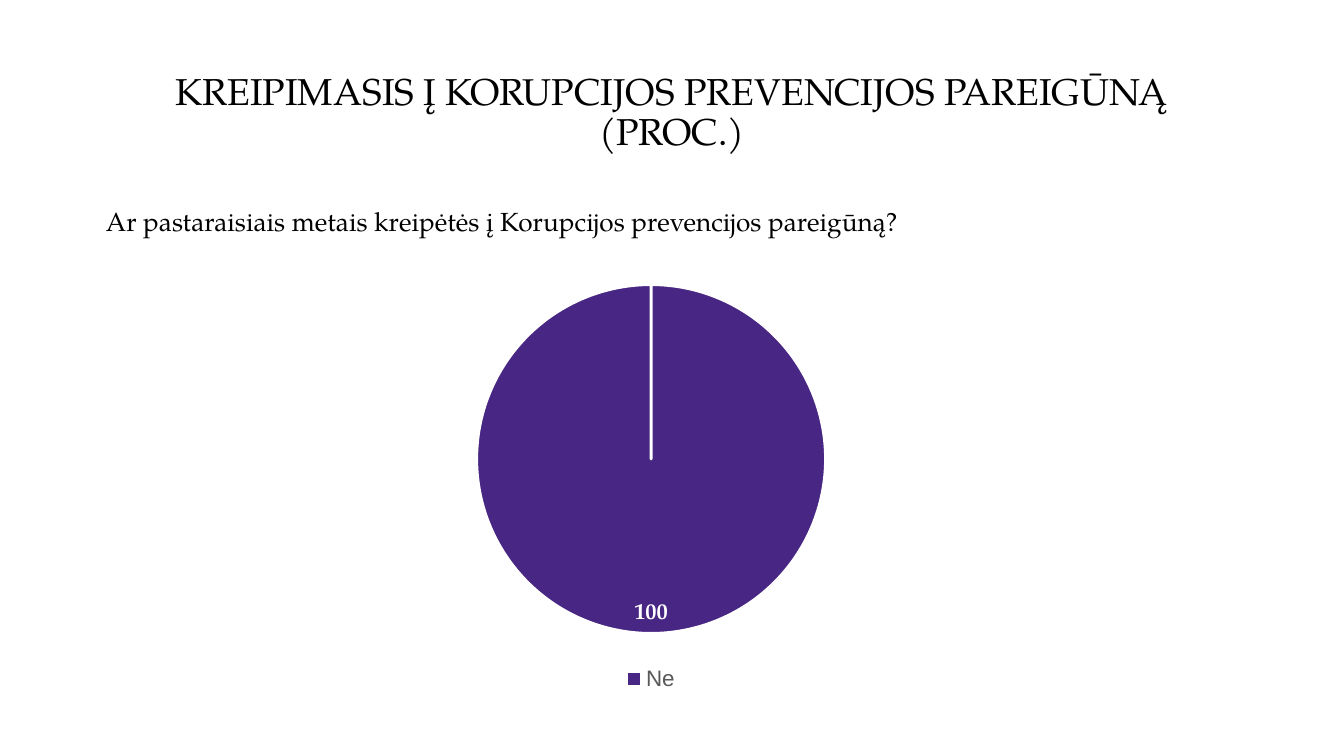
import dataclasses

import pptx
import pptx.chart.data
import pptx.dml.color
import pptx.enum.chart
import pptx.enum.text
import pptx.util

RGB = pptx.dml.color.RGBColor.from_string
Pt = pptx.util.Pt
ALIGN = pptx.enum.text.PP_ALIGN
ANCHOR = pptx.enum.text.MSO_ANCHOR
CHART = pptx.enum.chart


@dataclasses.dataclass(frozen=True)
class Theme:
    serif: str = "TeX Gyre Pagella"
    sans: str = "Arial"
    ink: str = "000000"
    muted: str = "595959"
    dark: str = "404040"
    paper: str = "FFFFFF"
    accent: str = "482683"
    title: int = 20
    body: int = 14
    label: int = 12
    base: int = 10
    border: float = 1.5


def assign(obj, values):
    for name, value in values.items():
        setattr(obj, name, value)


class Deck:
    def __init__(self, theme):
        self.theme = theme
        self.prs = pptx.Presentation()
        width = pptx.util.Inches(10)
        assign(self.prs, {"slide_width": width, "slide_height": width * 9 // 16})
        self.s = self.prs.slides.add_slide(self.prs.slide_layouts[6])

    def box(self, x, y, w, h):
        column, row = self.prs.slide_width / 100, self.prs.slide_height / 100
        return [round(v) for v in (x * column, y * row, w * column, h * row)]

    def font(self, font, name, size, color, bold=False):
        assign(font, {"name": name, "size": Pt(size), "bold": bold})
        font.color.rgb = RGB(color)

    def text(self, text, area, size, align, anchor):
        tf = self.s.shapes.add_textbox(*self.box(*area)).text_frame
        assign(tf, {"word_wrap": True, "vertical_anchor": anchor})
        p = tf.paragraphs[0]
        assign(p, {"alignment": align, "line_spacing": 0.9})
        r = p.add_run()
        r.text = text
        self.font(r.font, self.theme.serif, size, self.theme.ink)

    def pie(self, name, values, area):
        t = self.theme
        data = pptx.chart.data.CategoryChartData()
        data.categories = list(values)
        data.add_series(name, list(values.values()))
        chart = self.s.shapes.add_chart(
            CHART.XL_CHART_TYPE.PIE, *self.box(*area), data).chart
        assign(chart, {"has_title": False, "has_legend": True})
        self.font(chart.font, t.sans, t.base, t.ink)
        assign(chart.legend, {"position": CHART.XL_LEGEND_POSITION.BOTTOM,
                              "include_in_layout": False})
        self.font(chart.legend.font, t.sans, t.label, t.muted)
        plot = chart.plots[0]
        plot.vary_by_categories = True
        series = plot.series[0]
        inside = CHART.XL_LABEL_POSITION.INSIDE_END
        assign(series.data_labels, {"show_value": True, "show_percentage": False,
                                    "position": inside})
        self.font(series.data_labels.font, t.sans, t.label, t.dark)
        point = series.points[0]
        self.font(point.data_label.font, t.serif, t.label, t.paper, bold=True)
        point.data_label.position = inside
        piece = point.format
        piece.fill.solid()
        piece.fill.fore_color.rgb = RGB(t.accent)
        piece.line.width = Pt(t.border)
        piece.line.color.rgb = RGB(t.paper)


def main():
    theme = Theme()
    deck = Deck(theme)
    deck.text("KREIPIMASIS Į KORUPCIJOS PREVENCIJOS PAREIGŪNĄ (PROC.)",
              (6.9, 5.3, 86.2, 19.4), theme.title, ALIGN.CENTER, ANCHOR.MIDDLE)
    deck.text("Ar pastaraisiais metais kreipėtės į Korupcijos prevencijos pareigūną?",
              (6.9, 26.7, 86.2, 63.5), theme.body, ALIGN.JUSTIFY, ANCHOR.TOP)
    deck.pie("Series 1", {"Ne": 100}, (15.1, 35.2, 66.7, 56.9))
    deck.prs.save("out.pptx")


if __name__ == "__main__":
    main()
